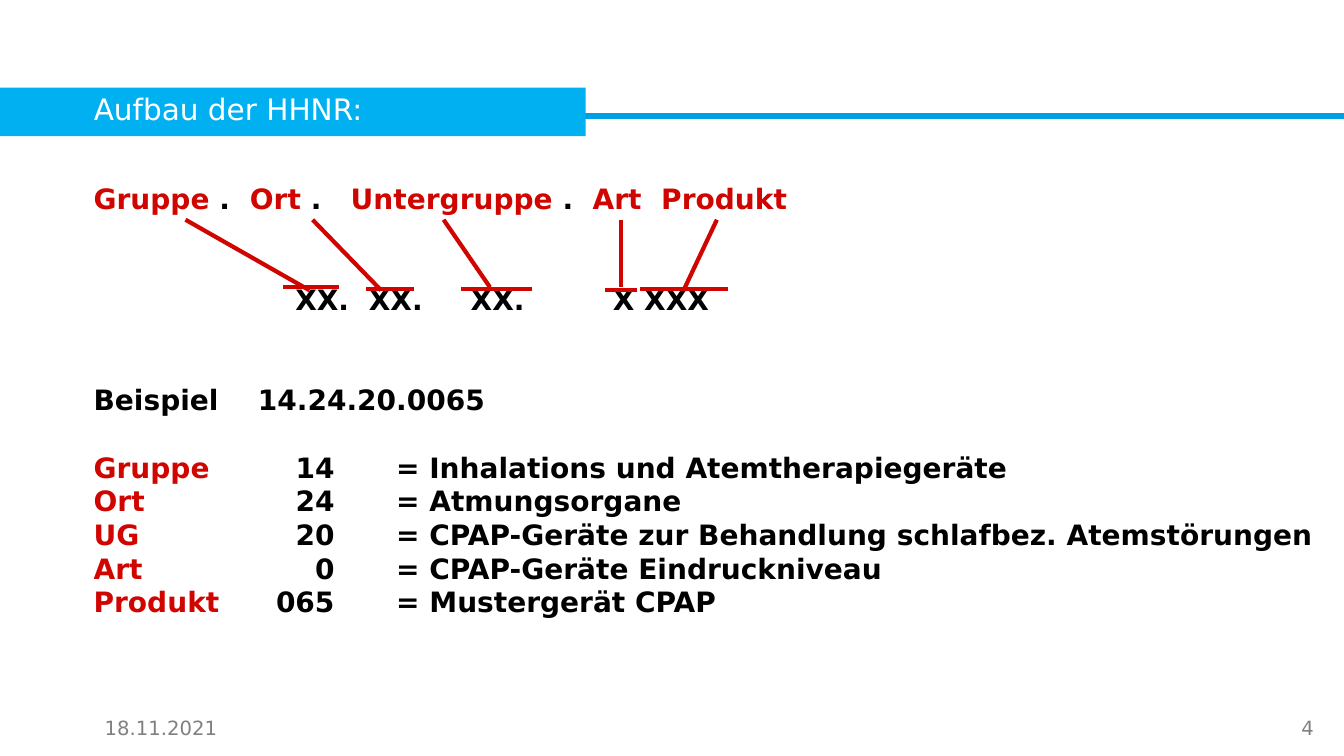
from lxml import etree
from pptx import Presentation
from pptx.dml.color import RGBColor
from pptx.enum.shapes import MSO_CONNECTOR, MSO_SHAPE
from pptx.enum.text import MSO_ANCHOR, MSO_AUTO_SIZE, PP_ALIGN
from pptx.oxml.ns import qn
from pptx.util import Inches, Pt

COLORS = {
    "band": "00B0F0",
    "rule": "009FE3",
    "red": "D00500",
    "black": "000000",
    "white": "FFFFFF",
    "grey": "808080",
}
FONT = "DejaVu Sans"
LINE_PITCH = 24

# Tab stops in inches from the text edge: (position, alignment)
NAME_TABS = [(1.55, "l"), (2.55, "l"), (4.95, "l"), (5.63, "l")]
MASK_TABS = [(2.0, "l"), (2.73, "l"), (3.74, "l"), (5.15, "l")]
EXAMPLE_TABS = [(1.63, "l")]
ROW_TABS = [(2.39, "r"), (3.0, "l")]

NAMES = [
    ("Gruppe ", "red"), (".", "black"),
    ("\tOrt ", "red"), (".", "black"),
    ("\tUntergruppe ", "red"), (".", "black"),
    ("\tArt\tProdukt", "red"),
]
EXAMPLE_ROWS = [
    ("Gruppe", "14", "Inhalations und Atemtherapiegeräte"),
    ("Ort", "24", "Atmungsorgane"),
    ("UG", "20", "CPAP-Geräte zur Behandlung schlafbez. Atemstörungen"),
    ("Art", "0", "CPAP-Geräte Eindruckniveau"),
    ("Produkt", "065", "Mustergerät CPAP"),
]

# Lines relative to the top left of the body: (x1, y1, x2, y2)
POINTERS = [
    (1.01, 0.43, 2.24, 1.13),
    (2.27, 0.43, 2.95, 1.13),
    (3.57, 0.43, 4.03, 1.10),
    (5.33, 0.43, 5.33, 1.10),
    (6.28, 0.43, 5.95, 1.13),
]
OVERLINES = [
    (1.98, 1.10, 2.53, 1.10),
    (2.80, 1.12, 3.28, 1.12),
    (3.74, 1.12, 4.45, 1.12),
    (5.17, 1.13, 5.49, 1.13),
    (5.52, 1.12, 6.39, 1.12),
]


def rgb(color):
    return RGBColor.from_string(COLORS[color])


def add_run(paragraph, text, color, size, bold=False):
    run = paragraph.add_run()
    run.text = text
    for attribute, value in {"name": FONT, "size": Pt(size), "bold": bold}.items():
        setattr(run.font, attribute, value)
    run.font.color.rgb = rgb(color)


def set_tabs(paragraph, stops):
    tab_list = etree.SubElement(paragraph._p.get_or_add_pPr(), qn("a:tabLst"))
    for position, alignment in stops:
        etree.SubElement(tab_list, qn("a:tab"),
                         pos=str(Inches(position)), algn=alignment)


def add_line(slide, start, end, color, width):
    line = slide.shapes.add_connector(
        MSO_CONNECTOR.STRAIGHT, *[Inches(value) for value in (*start, *end)])
    line.line.color.rgb = rgb(color)
    line.line.width = Pt(width)
    etree.SubElement(line._element.spPr, qn("a:effectLst"))


def add_heading(slide, left, top, width, height):
    """Band with the title, continued by a rule to the right slide edge."""
    rule_y = top + 0.28
    add_line(slide, (left, rule_y), (13.33, rule_y), "rule", 3.82)
    band = slide.shapes.add_shape(
        MSO_SHAPE.RECTANGLE, Inches(left), Inches(top), Inches(width), Inches(height))
    band.shadow.inherit = False
    band.fill.solid()
    band.fill.fore_color.rgb = rgb("band")
    band.line.fill.background()

    title = slide.shapes.title
    indent = 0.83
    place = {"left": left + indent, "top": top - 0.01,
             "width": width - indent, "height": height}
    for attribute, value in place.items():
        setattr(title, attribute, Inches(value))
    frame = title.text_frame
    for attribute, value in {"auto_size": MSO_AUTO_SIZE.NONE, "word_wrap": True,
                             "vertical_anchor": MSO_ANCHOR.MIDDLE}.items():
        setattr(frame, attribute, value)
    heading = frame.paragraphs[0]
    heading.alignment = PP_ALIGN.LEFT
    heading.line_spacing = 0.9
    add_run(heading, "Aufbau der HHNR:", "white", 21.1)
    # The title belongs in front of its band
    slide.shapes._spTree.append(title._element)


def add_number_structure(slide, left, top, width, height):
    """Parts of the number, its mask and a worked example."""
    body = slide.shapes.add_textbox(
        Inches(left), Inches(top), Inches(width), Inches(height))
    frame = body.text_frame
    frame.word_wrap = True

    # Each line: (runs, tab stops, empty lines above)
    lines = [
        (NAMES, NAME_TABS, 0),
        ([("\tXX.\tXX.\tXX.\tX XXX", "black")], MASK_TABS, 2),
        ([("Beispiel\t14.24.20.0065", "black")], EXAMPLE_TABS, 2),
    ]
    for index, (part, code, meaning) in enumerate(EXAMPLE_ROWS):
        runs = [(part, "red"), (f"\t{code}\t= {meaning}", "black")]
        lines.append((runs, ROW_TABS, 0 if index else 1))

    for index, (runs, stops, gap) in enumerate(lines):
        paragraph = frame.add_paragraph() if index else frame.paragraphs[0]
        set_tabs(paragraph, stops)
        paragraph.line_spacing = Pt(LINE_PITCH)
        if gap:
            paragraph.space_before = Pt(gap * LINE_PITCH)
        for text, color in runs:
            add_run(paragraph, text, color, 20, bold=True)

    for x1, y1, x2, y2 in POINTERS + OVERLINES:
        add_line(slide, (left + x1, top + y1), (left + x2, top + y2), "red", 3)


def add_footer(slide, left, top, width, height):
    """Date at the left end of the box, slide number at the right end."""
    part_width = 2.56
    for text, x, alignment in [
        ("18.11.2021", left, PP_ALIGN.LEFT),
        ("4", left + width - part_width, PP_ALIGN.RIGHT),
    ]:
        part = slide.shapes.add_textbox(
            Inches(x), Inches(top), Inches(part_width), Inches(height))
        part.text_frame.word_wrap = True
        paragraph = part.text_frame.paragraphs[0]
        paragraph.alignment = alignment
        add_run(paragraph, text, "grey", 14)


def main():
    presentation = Presentation()
    presentation.slide_width = Inches(13.33)
    presentation.slide_height = Inches(7.5)
    slide = presentation.slides.add_slide(presentation.slide_layouts[5])
    add_heading(slide, 0, 0.87, 5.81, 0.48)
    add_number_structure(slide, 0.83, 1.75, 12.39, 5.03)
    add_footer(slide, 0.94, 7.05, 12.19, 0.34)
    presentation.save("out.pptx")


if __name__ == "__main__":
    main()
